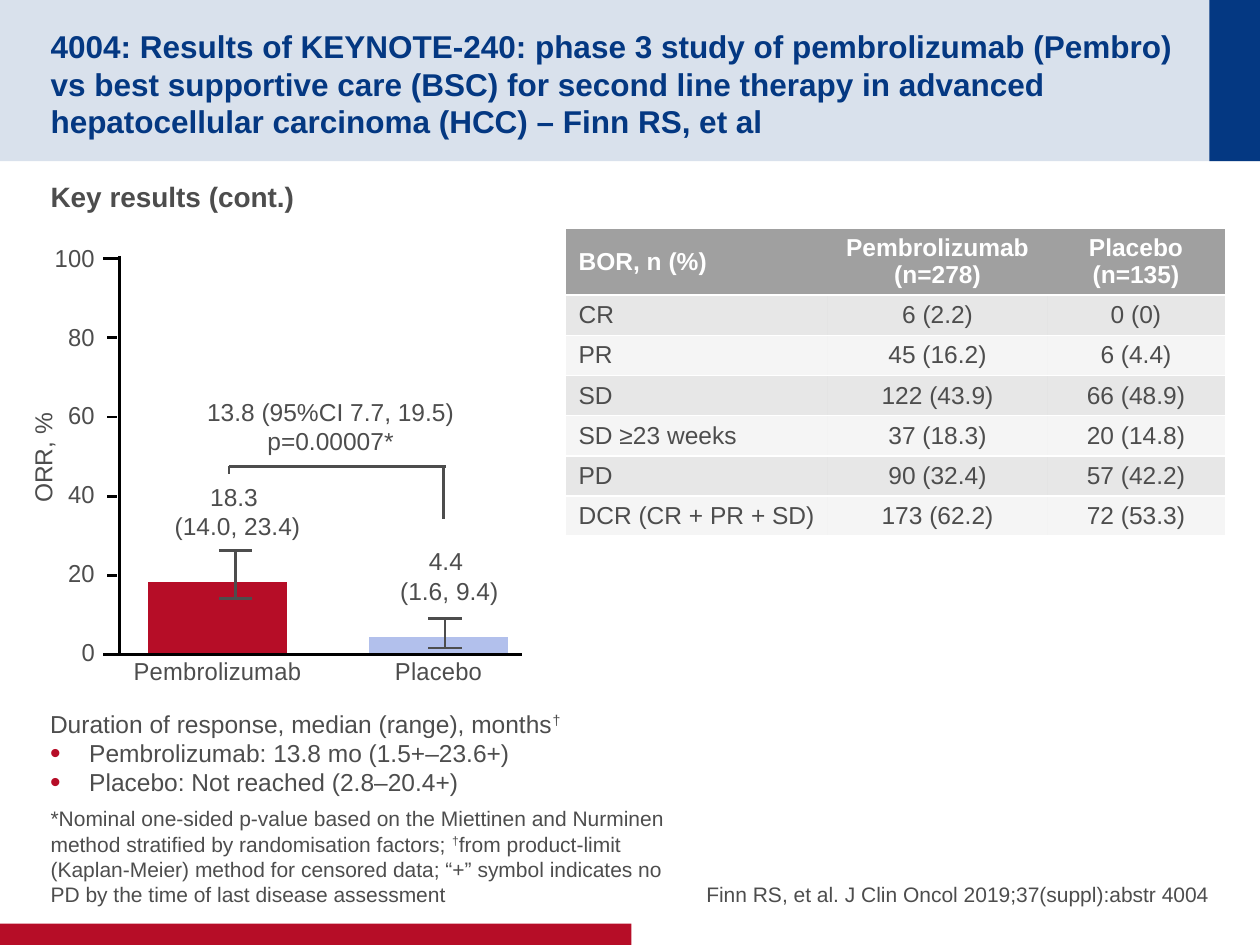
from lxml.etree import SubElement
from pptx import Presentation
from pptx.chart.data import CategoryChartData
from pptx.dml.color import RGBColor
from pptx.enum.chart import XL_CHART_TYPE, XL_TICK_MARK
from pptx.enum.shapes import MSO_CONNECTOR, MSO_SHAPE
from pptx.enum.text import MSO_ANCHOR, MSO_AUTO_SIZE, PP_ALIGN
from pptx.oxml import parse_xml
from pptx.oxml.ns import nsdecls, qn
from pptx.util import Cm, Pt

NAVY, RED, LILAC = "043882", "B60D27", "B2C0EC"
TEXT, GREY, BLACK, WHITE = "4D4D4D", "A0A0A0", "000000", "FFFFFF"

RESPONSES = [
    ("BOR, n (%)", "Pembrolizumab\v(n=278)", "Placebo\v(n=135)"),
    ("CR", "6 (2.2)", "0 (0)"),
    ("PR", "45 (16.2)", "6 (4.4)"),
    ("SD", "122 (43.9)", "66 (48.9)"),
    ("SD ≥23 weeks", "37 (18.3)", "20 (14.8)"),
    ("PD", "90 (32.4)", "57 (42.2)"),
    ("DCR (CR + PR + SD)", "173 (62.2)", "72 (53.3)"),
]


def rgb(colour):
    """Turn a hex string into a colour."""
    return RGBColor.from_string(colour)


def paint(fill, colour, opacity=100):
    """Fill with a solid colour at an opacity in percent."""
    fill.solid()
    fill.fore_color.rgb = rgb(colour)
    if opacity < 100:
        solid = fill._xPr.find(qn("a:solidFill"))
        SubElement(solid[0], qn("a:alpha")).set("val", str(opacity * 1000))


def style_font(font, size, colour=TEXT, bold=False):
    """Set typeface, size, colour and weight."""
    font.name, font.size, font.bold = "Arial", Pt(size), bold
    font.color.rgb = rgb(colour)


def write(text_frame, lines, size, colour=TEXT, bold=False, align=PP_ALIGN.LEFT):
    """Write one paragraph per line, raising any dagger."""
    text_frame.text = "\n".join([""] * len(lines))
    for paragraph, line in zip(text_frame.paragraphs, lines):
        paragraph.alignment = align
        paragraph.space_before = Pt(0)
        for piece in filter(None, line.partition("†")):
            run = paragraph.add_run()
            run.text = piece
            style_font(run.font, size, colour, bold)
            if piece == "†":
                run._r.get_or_add_rPr().set("baseline", "30000")


def set_bullet(paragraph, indent, bullet=None):
    """Give a paragraph a hanging red bullet, or no bullet at all."""
    properties = paragraph._p.get_or_add_pPr()
    properties.set("marL", str(Cm(indent)))
    properties.set("indent", str(-Cm(indent)))
    if bullet is None:
        SubElement(properties, qn("a:buNone"))
        return
    colour = SubElement(properties, qn("a:buClr"))
    SubElement(colour, qn("a:srgbClr")).set("val", RED)
    SubElement(properties, qn("a:buSzPct")).set("val", "123000")
    SubElement(properties, qn("a:buFont")).set("typeface", "Arial")
    SubElement(properties, qn("a:buChar")).set("char", bullet)


def place(shape, left, top, width, height):
    """Move and size a shape in centimetres."""
    shape.left, shape.top = Cm(left), Cm(top)
    shape.width, shape.height = Cm(width), Cm(height)


def fill_placeholder(shape, box, text, size, colour=TEXT, bold=False,
                     align=PP_ALIGN.LEFT, anchor=MSO_ANCHOR.BOTTOM, inset=(0, 0)):
    """Place a placeholder and write one plain paragraph in it."""
    place(shape, *box)
    frame = shape.text_frame
    frame.auto_size = MSO_AUTO_SIZE.NONE
    frame.vertical_anchor = anchor
    frame.margin_left = frame.margin_right = 0
    frame.margin_top, frame.margin_bottom = map(Cm, inset)
    write(frame, [text], size, colour, bold, align)
    set_bullet(frame.paragraphs[0], 0)


def add_band(slide, box, colour, opacity=100):
    """Add a plain rectangle behind the text."""
    band = slide.shapes.add_shape(MSO_SHAPE.RECTANGLE, *map(Cm, box))
    band.shadow.inherit = False
    paint(band.fill, colour, opacity)
    band.line.fill.background()
    slide.shapes._spTree.insert(2, band._element)


def add_line(slide, start_x, start_y, end_x, end_y, colour=TEXT):
    """Add a straight line without shadow."""
    line = slide.shapes.add_connector(
        MSO_CONNECTOR.STRAIGHT, *map(Cm, (start_x, start_y, end_x, end_y)))
    line.line.color.rgb = rgb(colour)
    line.line.width = Pt(1.5)
    SubElement(line._element.spPr, qn("a:effectLst"))


def add_label(slide, box, lines, align=PP_ALIGN.CENTER, wrap=False):
    """Add a text box and return it."""
    label = slide.shapes.add_textbox(*map(Cm, box))
    label.text_frame.word_wrap = wrap
    write(label.text_frame, lines, 14, align=align)
    return label


def add_error_bar(slide, x, top, bottom):
    """Add a vertical bar with a cap at each end."""
    add_line(slide, x, top, x, bottom)
    for y in (top, bottom):
        add_line(slide, x - 0.34, y, x + 0.34, y)


def add_axes(slide, x=2.41, top=5.21, base=13.2):
    """Draw the axis lines and their ticks."""
    add_line(slide, x, top - 0.05, x, base, BLACK)
    add_line(slide, x, base, 10.52, base, BLACK)
    for index in range(6):
        y = top + index * (base - top) / 5
        start, end = (2.08, x) if index in (0, 5) else (2.16, 2.36)
        add_line(slide, start, y, end, y, BLACK)


def add_response_chart(slide):
    """Add the column chart of response rates."""
    data = CategoryChartData()
    data.categories = ["Pembrolizumab", "Placebo"]
    data.add_series("Series 1", (18, 4))
    chart = slide.shapes.add_chart(
        XL_CHART_TYPE.COLUMN_CLUSTERED, *map(Cm, (1.1, 4.12, 10.06, 11.28)), data).chart
    chart.has_legend = chart.has_title = False
    style_font(chart.font, 10)
    for axis in (chart.category_axis, chart.value_axis):
        style_font(axis.tick_labels.font, 14)
        axis.format.line.fill.background()
        axis.has_major_gridlines = False
    chart.category_axis.major_tick_mark = XL_TICK_MARK.NONE
    chart.value_axis.major_tick_mark = XL_TICK_MARK.OUTSIDE
    chart.value_axis.minimum_scale, chart.value_axis.maximum_scale = 0, 100
    chart.value_axis.major_unit = 20
    plot = chart.plots[0]
    plot.gap_width, plot.overlap, plot.vary_by_categories = 59, -21, False
    for index, colour in enumerate((RED, LILAC)):
        paint(plot.series[0].points[index].format.fill, colour)
    area = chart._chartSpace.chart.plotArea
    for old in area.findall(qn("c:layout")):
        area.remove(old)
    settings = [("layoutTarget", "inner"), ("xMode", "edge"), ("yMode", "edge"),
                ("x", 0.077), ("y", 0.097), ("w", 0.914), ("h", 0.705)]
    items = "".join(f'<c:{name} val="{value}"/>' for name, value in settings)
    area.insert(0, parse_xml(
        f'<c:layout {nsdecls("c")}><c:manualLayout>{items}</c:manualLayout></c:layout>'))


def set_borders(cell):
    """Give a cell white rules above and below and none at its sides."""
    properties = cell._tc.get_or_add_tcPr()
    for side in ("L", "R", "T", "B"):
        border = SubElement(properties, qn("a:ln" + side), w=str(Pt(1)))
        if side in "LR":
            SubElement(border, qn("a:noFill"))
        else:
            solid = SubElement(border, qn("a:solidFill"))
            SubElement(solid, qn("a:srgbClr")).set("val", WHITE)


def add_response_table(slide):
    """Add the table of best overall responses."""
    table = slide.shapes.add_table(
        len(RESPONSES), 3, *map(Cm, (11.41, 4.6, 13.28, 6.21))).table
    table.first_row = table.horz_banding = False
    for column, width in zip(table.columns, (5.28, 4.42, 3.58)):
        column.width = Cm(width)
    for row_index, values in enumerate(RESPONSES):
        header = row_index == 0
        table.rows[row_index].height = Cm(1.35 if header else 0.81)
        opacity = 100 if header else 25 if row_index % 2 else 10
        for column_index, value in enumerate(values):
            cell = table.cell(row_index, column_index)
            cell.vertical_anchor = MSO_ANCHOR.MIDDLE
            cell.margin_top = cell.margin_bottom = Cm(0.11)
            paragraph = cell.text_frame.paragraphs[0]
            paragraph.text = value
            paragraph.alignment = PP_ALIGN.CENTER if column_index else PP_ALIGN.LEFT
            for run in paragraph.runs:
                style_font(run.font, 14, WHITE if header else TEXT, header)
            set_borders(cell)
            paint(cell.fill, GREY, opacity)


def add_texts(slide):
    """Fill the title and body placeholders."""
    title, heading, citation, footnote, spare = slide.placeholders
    fill_placeholder(
        title, (1.02, 0.5, 22.89, 2.24),
        "4004: Results of KEYNOTE-240: phase 3 study of pembrolizumab (Pembro) vs best "
        "supportive care (BSC) for second line therapy in advanced hepatocellular "
        "carcinoma (HCC) – Finn RS, et al",
        18, NAVY, True, anchor=MSO_ANCHOR.MIDDLE, inset=(0.13, 0))
    fill_placeholder(heading, (1.02, 3.48, 23.37, 13.18), "Key results (cont.)", 16,
                     bold=True, anchor=MSO_ANCHOR.TOP, inset=(0.13, 0.13))
    fill_placeholder(citation, (12.9, 16.93, 11.48, 1.35),
                     "Finn RS, et al. J Clin Oncol 2019;37(suppl):abstr 4004", 12,
                     align=PP_ALIGN.RIGHT)
    fill_placeholder(
        footnote, (1.02, 16.93, 12.98, 1.35),
        "*Nominal one-sided p-value based on the Miettinen and Nurminen method stratified "
        "by randomisation factors; †from product-limit (Kaplan-Meier) method for censored "
        "data; “+” symbol indicates no PD by the time of last disease assessment", 12)
    spare._element.getparent().remove(spare._element)


def main():
    """Build and save the slide."""
    presentation = Presentation()
    presentation.slide_width, presentation.slide_height = Cm(25.4), Cm(19.05)
    slide = presentation.slides.add_slide(presentation.slide_layouts[4])
    add_texts(slide)
    add_band(slide, (0, 18.62, 12.73, 0.43), RED)
    add_band(slide, (24.38, 0, 1.02, 3.25), NAVY)
    add_band(slide, (0, 0, 25.4, 3.25), NAVY, 15)
    add_response_table(slide)
    add_axes(slide)
    add_label(slide, (-0.3, 8.8, 2.34, 0.86), ["ORR, %"]).rotation = 270
    add_response_chart(slide)
    add_error_bar(slide, 4.75, 11.1, 12.06)
    add_error_bar(slide, 8.97, 12.47, 13.06)
    add_line(slide, 8.94, 9.4, 8.94, 10.46)
    add_line(slide, 8.99, 9.4, 4.62, 9.4)
    add_line(slide, 4.62, 9.4, 4.62, 9.55)
    add_label(slide, (3.91, 7.87, 5.51, 1.45), ["13.8 (95%CI 7.7, 19.5)", "p=0.00007*"])
    add_label(slide, (3.12, 9.59, 3.2, 1.45), ["18.3", " (14.0, 23.4)"])
    add_label(slide, (7.67, 10.89, 2.64, 1.45), ["4.4", " (1.6, 9.4)"])
    duration = add_label(
        slide, (0.76, 14.16, 12.14, 2.06),
        ["Duration of response, median (range), months†",
         "Pembrolizumab: 13.8 mo (1.5+–23.6+)", "Placebo: Not reached (2.8–20.4+)"],
        PP_ALIGN.LEFT, True)
    for paragraph in duration.text_frame.paragraphs[1:]:
        set_bullet(paragraph, 0.79, "•")
    presentation.save("out.pptx")


if __name__ == "__main__":
    main()
